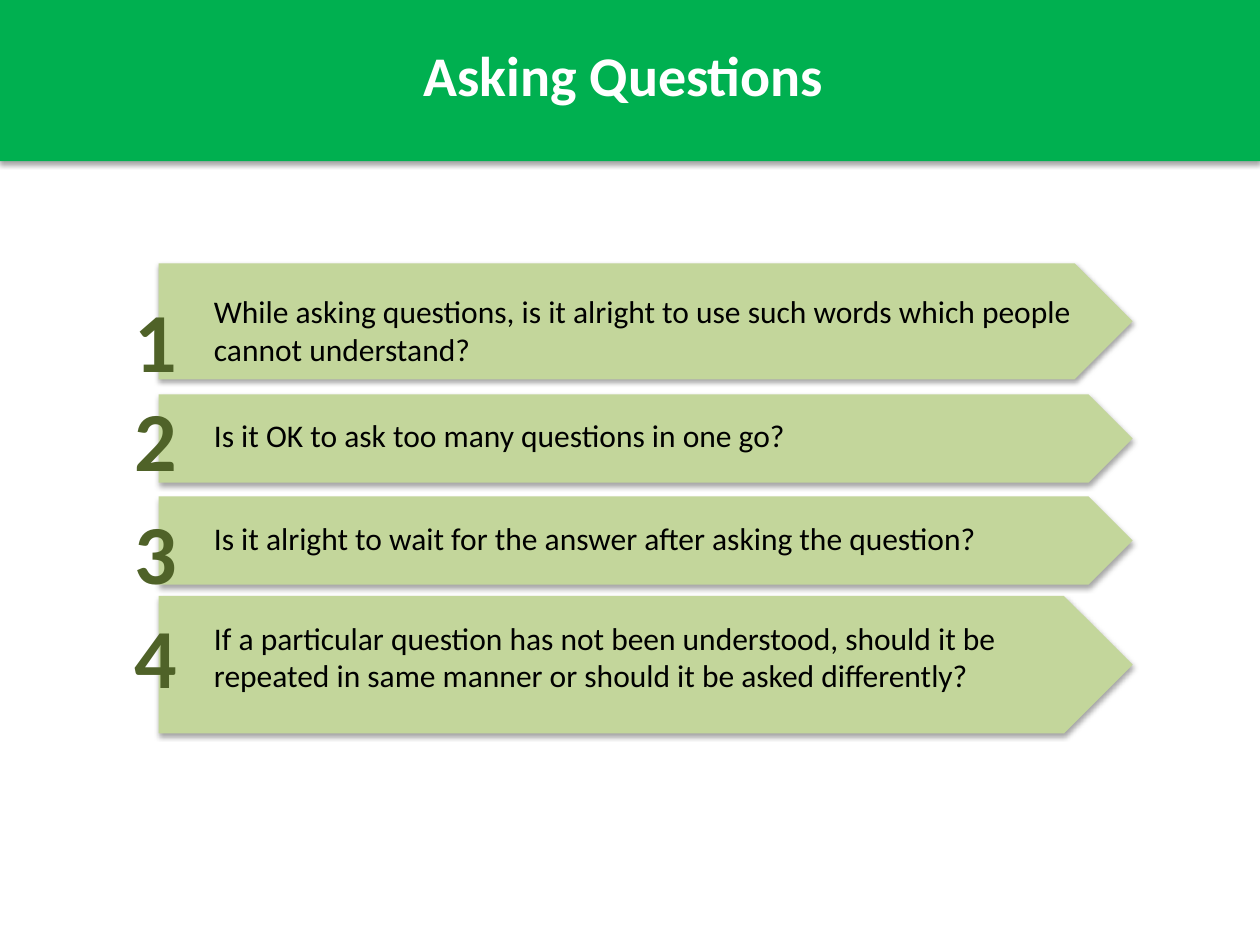
from lxml import etree
from pptx import Presentation
from pptx.dml.color import RGBColor
from pptx.enum.shapes import MSO_SHAPE
from pptx.enum.text import MSO_AUTO_SIZE, PP_ALIGN
from pptx.oxml import parse_xml
from pptx.util import Inches, Pt

RECTANGLE, PENTAGON = MSO_SHAPE.RECTANGLE, MSO_SHAPE.PENTAGON
FIT_SHAPE = MSO_AUTO_SIZE.SHAPE_TO_FIT_TEXT
LEFT, CENTER = PP_ALIGN.LEFT, PP_ALIGN.CENTER

GREEN = RGBColor(0x00, 0xB0, 0x50)
LIGHT_OLIVE = RGBColor(0xC3, 0xD6, 0x9B)
DARK_OLIVE = RGBColor(0x4F, 0x62, 0x28)
WHITE = RGBColor(0xFF, 0xFF, 0xFF)
BLACK = RGBColor(0x00, 0x00, 0x00)

TITLE = "Asking Questions "
# Question, arrow top, arrow height, text top, text height, number top
QUESTIONS = [
    ("While asking questions, is it alright to use such words which people "
     "cannot understand?", 2.09, 0.92, 2.27, 0.71, 2.24),
    ("Is it OK to ask too many questions in one go?",
     3.13, 0.70, 3.25, 0.40, 3.03),
    ("Is it alright to wait for the answer after asking the question?",
     3.94, 0.70, 4.07, 0.40, 3.92),
    ("If a particular question has not been understood, should it be "
     "repeated in same manner or should it be asked differently?",
     4.73, 1.09, 4.86, 0.71, 4.75),
]

TITLE_FORMAT = {"name": "Calibri", "size": Pt(32), "bold": True}
QUESTION_FORMAT = {"name": "Calibri", "size": Pt(18)}
NUMBER_FORMAT = {"name": "Calibri", "size": Pt(48), "bold": True}

SHADOW = (
    '<a:effectLst xmlns:a="http://schemas.openxmlformats.org/drawingml/2006/main">'
    '<a:outerShdw blurRad="40000" dist="23000" dir="5400000" rotWithShape="0">'
    '<a:srgbClr val="000000"><a:alpha val="35000"/></a:srgbClr>'
    '</a:outerShdw></a:effectLst>'
)


def add_block(slide, kind, box, color):
    """Add a filled shape without outline, with a soft shadow below."""
    shape = slide.shapes.add_shape(kind, *map(Inches, box))
    shape.fill.solid()
    shape.fill.fore_color.rgb = color
    shape.line.fill.background()
    properties = shape.fill._xPr
    for effects in properties.findall("{*}effectLst"):
        properties.remove(effects)
    etree.ElementBase.append(properties, parse_xml(SHADOW))


def add_text(slide, text, box, font_format, color, alignment=LEFT):
    frame = slide.shapes.add_textbox(*map(Inches, box)).text_frame
    frame.word_wrap = True
    frame.auto_size = FIT_SHAPE
    paragraph = frame.paragraphs[0]
    paragraph.alignment = alignment
    run = paragraph.add_run()
    run.text = text
    for name, value in font_format.items():
        setattr(run.font, name, value)
    run.font.color.rgb = color


def main():
    presentation = Presentation()
    presentation.slide_width, presentation.slide_height = Inches(10), Inches(7.5)
    slide = presentation.slides.add_slide(presentation.slide_layouts[6])

    # Title band
    add_block(slide, RECTANGLE, (0, 0, 10, 1.28), GREEN)
    add_text(slide, TITLE, (0, 0.27, 10, 0.64), TITLE_FORMAT, WHITE, CENTER)

    # Numbered question arrows
    for number, question in enumerate(QUESTIONS, start=1):
        text, arrow_top, arrow_height, text_top, text_height, number_top = question
        add_block(slide, PENTAGON, (1.26, arrow_top, 7.73, arrow_height), LIGHT_OLIVE)
        add_text(slide, text, (1.6, text_top, 7.13, text_height),
                 QUESTION_FORMAT, BLACK)
        add_text(slide, str(number), (0.97, number_top, 0.26, 0.91),
                 NUMBER_FORMAT, DARK_OLIVE)

    presentation.save("out.pptx")


if __name__ == "__main__":
    main()
